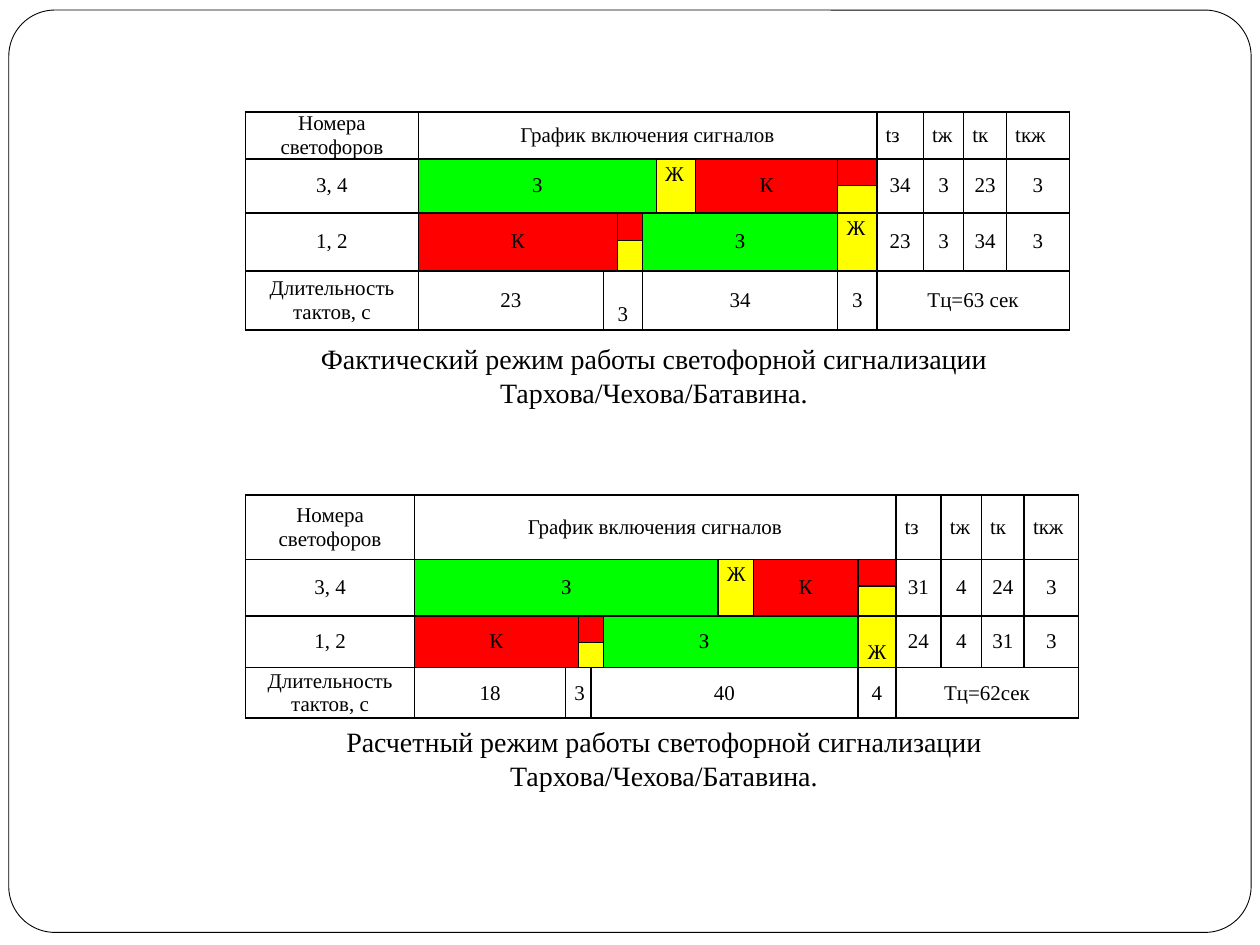
from dataclasses import dataclass

from lxml import etree
from pptx import Presentation
from pptx import util as u
from pptx.dml.color import RGBColor
from pptx.enum import shapes, text
from pptx.oxml import ns


@dataclass(frozen=True)
class Theme:
    font: str = "Times New Roman"
    ink: str = "000000"
    paper: str = "FFFFFF"
    red: str = "FF0000"
    yellow: str = "FFFF00"
    green: str = "00FF00"
    cell_size: int = 12
    caption_size: int = 16
    rule: float = 1
    frame_rule: float = 0.5


THEME = Theme()
LEFT, CENTER, RIGHT = text.PP_ALIGN.LEFT, text.PP_ALIGN.CENTER, text.PP_ALIGN.RIGHT
TOP, MIDDLE, BOTTOM = (text.MSO_ANCHOR.TOP, text.MSO_ANCHOR.MIDDLE,
                       text.MSO_ANCHOR.BOTTOM)
SIDES = ("L", "R", "T", "B")  # the order the file format requires


@dataclass(frozen=True)
class Cell:
    row: int
    col: int
    words: str = ""
    rows: int = 1
    cols: int = 1
    fill: str = THEME.paper
    align: text.PP_ALIGN = CENTER
    anchor: text.MSO_ANCHOR = MIDDLE
    open_side: str = ""


@dataclass(frozen=True)
class SignalPlan:
    top: float
    columns: tuple[float, ...]
    rows: tuple[float, ...]
    signals: list[Cell]
    durations: list[Cell]
    times: tuple[tuple[str, ...], tuple[str, ...]]
    cycle: str
    caption: str
    caption_top: float
    caption_width: float


def red_yellow(row: int, col: int, cols: int = 1) -> list[Cell]:
    """Red over yellow: the change towards green."""
    return [Cell(row, col, cols=cols, fill=THEME.red),
            Cell(row + 1, col, cols=cols, fill=THEME.yellow)]


def plan_cells(plan: SignalPlan) -> list[Cell]:
    first_time = len(plan.columns) - 4
    cells = [Cell(0, 0, "Номера светофоров"),
             Cell(0, 1, "График включения сигналов", cols=first_time - 1),
             Cell(1, 0, "3, 4", rows=2),
             Cell(3, 0, "1, 2", rows=2),
             Cell(5, 0, "Длительность тактов, с"),
             Cell(5, first_time, plan.cycle, cols=4)]
    cells += [Cell(0, first_time + i, name, align=LEFT)
              for i, name in enumerate(("tз", "tж", "tк", "tкж"))]
    cells += [Cell(1 + 2 * group, first_time + i, value, rows=2)
              for group, values in enumerate(plan.times)
              for i, value in enumerate(values)]
    return cells + plan.signals + plan.durations


def set_attributes(target, values: dict) -> None:
    for name, value in values.items():
        setattr(target, name, value)


def write(frame, words: str, size: int, align: text.PP_ALIGN) -> None:
    para = frame.paragraphs[0]
    para.alignment = align
    # Paragraph-level size keeps empty cells as low as filled ones
    set_attributes(para.font, {"size": u.Pt(size), "name": THEME.font})
    if not words:
        end = etree.SubElement(para._p, ns.qn("a:endParaRPr"))
        end.set("sz", str(size * 100))
        return
    span = para.add_run()
    span.text = words
    set_attributes(span.font, {"size": u.Pt(size), "name": THEME.font})
    span.font.color.rgb = RGBColor.from_string(THEME.ink)


def draw_borders(box, open_side: str) -> None:
    properties = box._tc.get_or_add_tcPr()
    for index, side in enumerate(SIDES):
        line = etree.Element(ns.qn(f"a:ln{side}"), w=str(u.Pt(THEME.rule)))
        if side == open_side:
            etree.SubElement(line, ns.qn("a:noFill"))
        else:
            solid = etree.SubElement(line, ns.qn("a:solidFill"))
            etree.SubElement(solid, ns.qn("a:srgbClr"), val=THEME.ink)
        properties.insert(index, line)


def draw_cell(table, cell: Cell) -> None:
    box = table.cell(cell.row, cell.col)
    if cell.rows * cell.cols > 1:
        box.merge(table.cell(cell.row + cell.rows - 1, cell.col + cell.cols - 1))
    edge = u.Inches(0 if cell.anchor == MIDDLE else 0.03)
    set_attributes(box, {"margin_left": u.Inches(0.07), "margin_right": u.Inches(0.07),
                         "margin_top": edge, "margin_bottom": edge,
                         "vertical_anchor": cell.anchor})
    box.fill.solid()
    box.fill.fore_color.rgb = RGBColor.from_string(cell.fill)
    write(box.text_frame, cell.words, THEME.cell_size, cell.align)
    draw_borders(box, cell.open_side)


def draw_plan(page, plan: SignalPlan) -> None:
    left = u.Inches(1.95)
    table = page.shapes.add_table(
        len(plan.rows), len(plan.columns), left, u.Inches(plan.top),
        u.Inches(sum(plan.columns)), u.Inches(sum(plan.rows))).table
    set_attributes(table, {"first_row": False, "horz_banding": False})
    for column, width in zip(table.columns, plan.columns):
        column.width = u.Inches(width)
    for row, height in zip(table.rows, plan.rows):
        row.height = u.Inches(height)
    for cell in plan_cells(plan):
        draw_cell(table, cell)

    # Caption under the table
    frame = page.shapes.add_textbox(left, u.Inches(plan.caption_top),
                                    u.Inches(plan.caption_width),
                                    u.Inches(0.64)).text_frame
    set_attributes(frame, {"word_wrap": True, "vertical_anchor": MIDDLE,
                           "auto_size": text.MSO_AUTO_SIZE.SHAPE_TO_FIT_TEXT})
    write(frame, plan.caption, THEME.caption_size, CENTER)


def draw_frame(page) -> None:
    frame = page.shapes.add_shape(
        shapes.MSO_SHAPE.ROUNDED_RECTANGLE, u.Inches(0.07), u.Inches(0.08),
        u.Inches(9.86), u.Inches(7.32))
    frame.adjustments[0] = 0.05
    frame.shadow.inherit = False
    frame.fill.solid()
    frame.fill.fore_color.rgb = RGBColor.from_string(THEME.paper)
    frame.line.color.rgb = RGBColor.from_string(THEME.ink)
    frame.line.width = u.Pt(THEME.frame_rule)


R, Y, G = THEME.red, THEME.yellow, THEME.green
PLANS = [
    # Actual mode
    SignalPlan(
        0.89, (1.37, 1.47, 0.11, 0.2, 0.11, 0.31, 1.13, 0.31, 0.37, 0.32, 0.34, 0.5),
        (0.37, 0.21, 0.22, 0.22, 0.24, 0.47),
        [Cell(1, 1, "З", 2, 4, G), Cell(1, 5, "Ж", 2, 1, Y, LEFT, TOP),
         Cell(1, 6, "К", 2, 1, R), *red_yellow(1, 7),
         Cell(3, 1, "К", 2, 2, R), *red_yellow(3, 3),
         Cell(3, 4, "З", 2, 3, G), Cell(3, 7, "Ж", 2, 1, Y, LEFT, TOP)],
        [Cell(5, 1, "23"), Cell(5, 2, "3", cols=2, anchor=BOTTOM),
         Cell(5, 4, "34", cols=3), Cell(5, 7, "3")],
        (("34", "3", "23", "3"), ("23", "3", "34", "3")), "Tц=63 сек",
        "Фактический режим работы светофорной сигнализации Тархова/Чехова/Батавина.",
        2.66, 6.48),
    # Calculated mode
    SignalPlan(
        3.93, (1.34, 1.2, 0.1, 0.1, 0.1, 0.91, 0.28, 0.83, 0.3, 0.36, 0.32, 0.34, 0.43),
        (0.51, 0.21, 0.24, 0.21, 0.19, 0.37),
        [Cell(1, 1, "З", 2, 5, G), Cell(1, 6, "Ж", 2, 1, Y, CENTER, TOP),
         Cell(1, 7, "К", 2, 1, R), *red_yellow(1, 8),
         Cell(3, 1, "К", 2, 2, R), *red_yellow(3, 3, 2),
         Cell(3, 5, "З", 2, 1, G, RIGHT, open_side="R"),
         Cell(3, 6, "", 2, 2, G, open_side="L"),
         Cell(3, 8, "Ж", 2, 1, Y, CENTER, BOTTOM)],
        [Cell(5, 1, "18"), Cell(5, 2, "3", cols=2),
         Cell(5, 4, "40", cols=4), Cell(5, 8, "4")],
        (("31", "4", "24", "3"), ("24", "4", "31", "3")), "Tц=62сек",
        "Расчетный режим работы светофорной сигнализации Тархова/Чехова/Батавина.",
        5.7, 6.64),
]


def main() -> None:
    deck = Presentation()
    set_attributes(deck, {"slide_width": u.Inches(10), "slide_height": u.Inches(7.5)})
    page = deck.slides.add_slide(deck.slide_layouts[6])
    draw_frame(page)
    for plan in PLANS:
        draw_plan(page, plan)
    deck.save("out.pptx")


if __name__ == "__main__":
    main()
